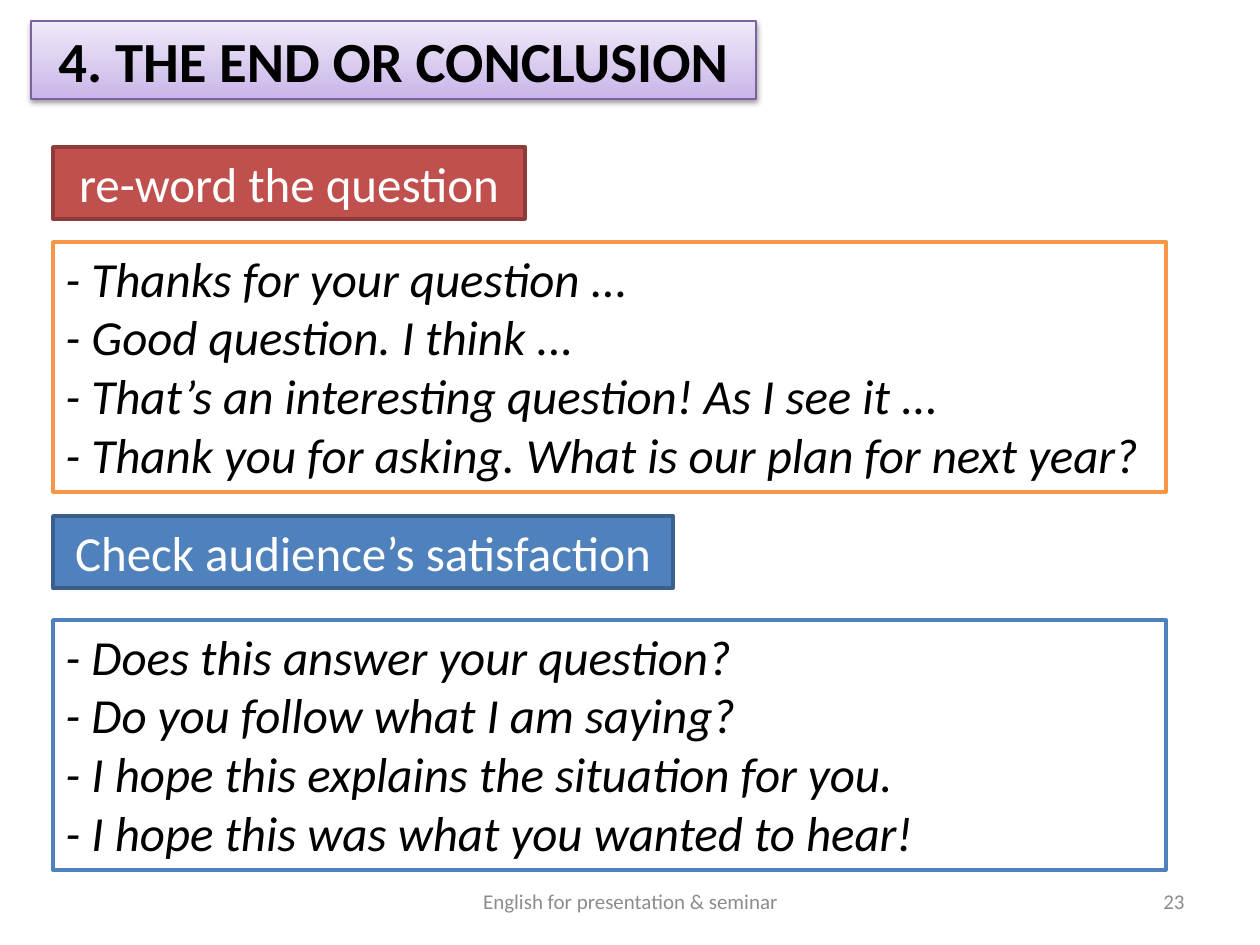
from lxml import etree
from pptx import Presentation
from pptx import util as u
from pptx.dml.color import RGBColor
from pptx.enum import shapes, text
from pptx.oxml import ns

SCALE = u.Inches(1) / 126
CENTER = text.PP_ALIGN.CENTER
LEFT = text.PP_ALIGN.LEFT
RIGHT = text.PP_ALIGN.RIGHT


def px(*values):
    return [u.Emu(round(v * SCALE)) for v in values]


def color(value):
    return RGBColor.from_string(value)


class Deck:
    font = "Calibri"
    black = "000000"
    white = "FFFFFF"
    grey = "8C8C8C"

    def __init__(self):
        self.prs = Presentation()
        self.prs.slide_width, self.prs.slide_height = px(1260, 945)

    def add_slide(self):
        self.s = self.prs.slides.add_slide(self.prs.slide_layouts[5])

    def set_text(self, sp, content, size, ink, align, anchor, bold=False, italic=False):
        tf = sp.text_frame
        tf.word_wrap = True
        tf.auto_size = text.MSO_AUTO_SIZE.NONE
        tf.vertical_anchor = anchor
        tf.text = content
        for p in tf.paragraphs:
            p.alignment = align
            p.font.name = self.font
            p.font.size = u.Pt(size)
            p.font.bold = bold
            p.font.italic = italic
            p.font.color.rgb = color(ink)

    def outline(self, sp, ink, width):
        sp.line.color.rgb = color(ink)
        sp.line.width = u.Pt(width)
        sp.shadow.inherit = False

    def title(self, box, content):
        sp = self.s.shapes.title
        sp.left, sp.top, sp.width, sp.height = px(*box)
        sp.fill.gradient()
        sp.fill.gradient_angle = 90
        for stop, ink in zip(sp.fill.gradient_stops, ("C9B5E8", "F0EAF9")):
            stop.color.rgb = color(ink)
        self.outline(sp, "7D60A0", 0.75)
        effects = sp._element.spPr.find(ns.qn("a:effectLst"))
        shadow = etree.SubElement(effects, ns.qn("a:outerShdw"), blurRad="40000",
                                  dist="20000", dir="5400000", rotWithShape="0")
        ink = etree.SubElement(shadow, ns.qn("a:srgbClr"), val=self.black)
        etree.SubElement(ink, ns.qn("a:alpha"), val="38000")
        self.set_text(sp, content, 32.4, self.black, CENTER, text.MSO_ANCHOR.MIDDLE, bold=True)

    def panel(self, box, fill, line):
        sp = self.s.shapes.add_shape(shapes.MSO_SHAPE.RECTANGLE, *px(*box))
        sp.fill.solid()
        sp.fill.fore_color.rgb = color(fill)
        self.outline(sp, line, 2)
        return sp

    def heading(self, box, fill, line, content):
        sp = self.panel(box, fill, line)
        self.set_text(sp, content, 28, self.white, CENTER, text.MSO_ANCHOR.TOP)

    def phrases(self, box, line, lines, separator="\n"):
        sp = self.panel(box, self.white, line)
        self.set_text(sp, separator.join(f"- {phrase}" for phrase in lines), 28,
                      self.black, LEFT, text.MSO_ANCHOR.TOP, italic=True)

    def footer(self, box, content, align):
        sp = self.s.shapes.add_textbox(*px(*box))
        self.set_text(sp, content, 12, self.grey, align, text.MSO_ANCHOR.MIDDLE)


def main():
    deck = Deck()
    deck.add_slide()
    deck.title((31, 21, 725, 78), "4. THE END OR CONCLUSION")
    deck.heading((53, 147, 472, 72), "C0504D", "8E3B39", "re-word the question")
    deck.phrases((53, 242, 1113, 250), "F79646", [
        "Thanks for your question ...",
        "Good question. I think ...",
        "That’s an interesting question! As I see it ...",
        "Thank you for asking. What is our plan for next year?",
    ])
    deck.heading((53, 516, 620, 72), "4F81BD", "3A5F8C", "Check audience’s satisfaction")
    deck.phrases((53, 620, 1113, 250), "4F81BD", [
        "Does this answer your question?",
        "Do you follow what I am saying?",
        "I hope this explains the situation for you.",
        "I hope this was what you wanted to hear!",
    ], separator="\v")
    deck.footer((903, 876, 294, 50), "23", RIGHT)
    deck.footer((431, 876, 399, 50), "English for presentation & seminar", CENTER)
    deck.prs.save("out.pptx")


if __name__ == "__main__":
    main()
